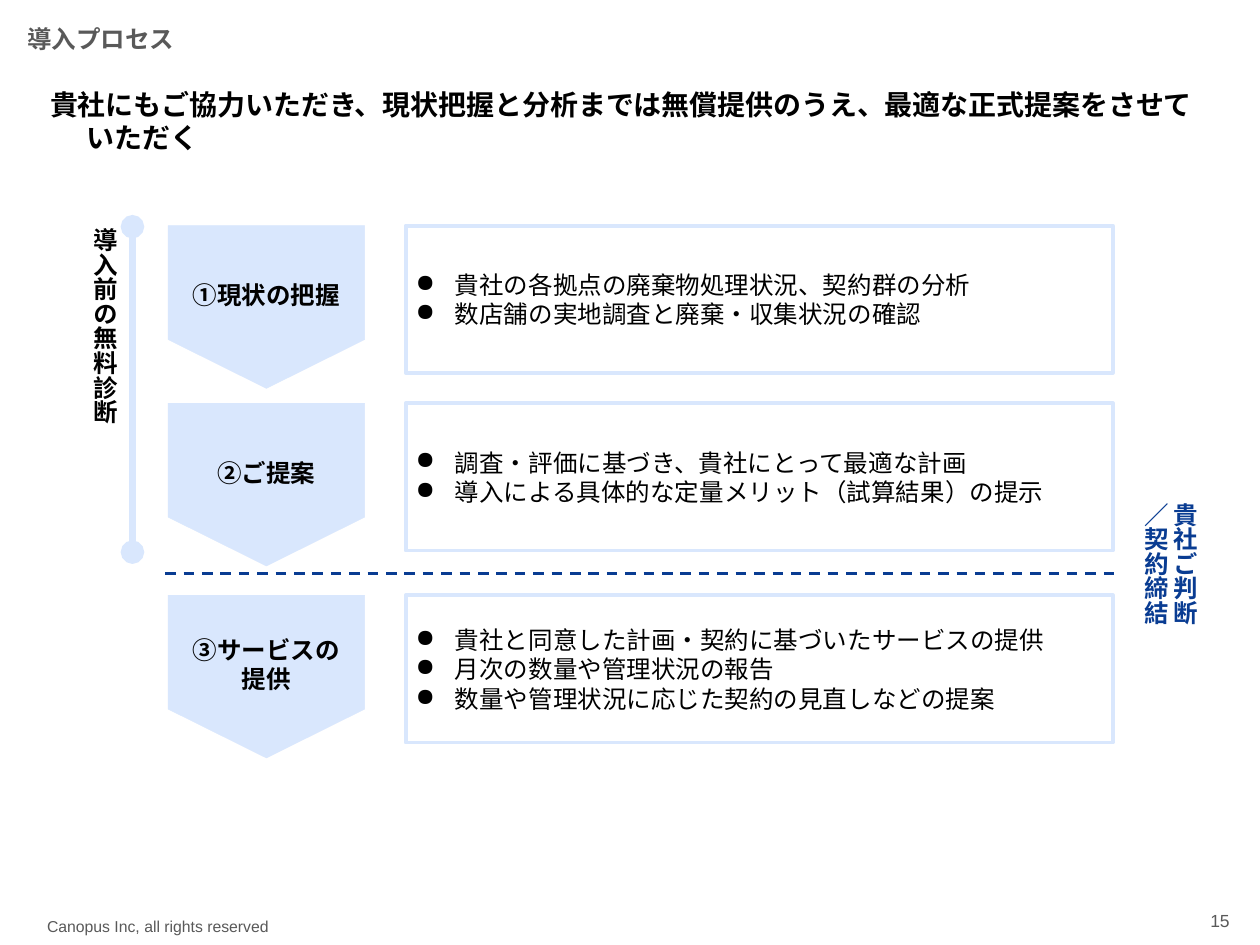
"""Build the introduction process slide."""
from dataclasses import dataclass

from lxml.etree import SubElement
from pptx import Presentation
from pptx.dml.color import RGBColor as RGB
from pptx.enum.dml import MSO_LINE as Dash
from pptx.enum.shapes import MSO_CONNECTOR as Link, MSO_SHAPE as Shape
from pptx.enum.text import MSO_ANCHOR as Anchor, MSO_AUTO_SIZE as Fit, PP_ALIGN as Align
from pptx.oxml.ns import qn
from pptx.util import Cm, Pt


@dataclass(frozen=True)
class Theme:
    ink: str = "000000"
    grey: str = "595959"
    pale: str = "D9E7FD"
    navy: str = "093C92"
    white: str = "FFFFFF"
    sans: str = "Noto Sans CJK JP"
    latin: str = "Arial"
    lead: int = 16
    body: int = 14
    page: int = 10
    foot: int = 9
    pitch: float = 1.2


class Deck:
    def __init__(self, theme):
        self.theme = theme
        self.prs = Presentation()
        self.prs.slide_width, self.prs.slide_height = Cm(25.4), Cm(19.05)
        self.slide = self.prs.slides.add_slide(self.prs.slide_layouts[1])
        self.shapes = self.slide.shapes

    def prose(self, frame, lines, size, color=None, bold=False, align=Align.LEFT,
              anchor=Anchor.MIDDLE, pad=(0.25, 0.13), indent=(0, 0), mark=None,
              font=None, vert=None, fit=Fit.NONE):
        """Fill a text frame, one paragraph per line."""
        frame.word_wrap, frame.auto_size = True, fit
        frame.vertical_anchor = anchor
        frame.margin_left = frame.margin_right = Cm(pad[0])
        frame.margin_top = frame.margin_bottom = Cm(pad[1])
        if vert:
            frame._txBody.bodyPr.set("vert", vert)
        for i, line in enumerate(lines):
            para = frame.add_paragraph() if i else frame.paragraphs[0]
            para.alignment = align
            para.space_before = para.space_after = Pt(0)
            para.line_spacing = 1.0 if font else Pt(size * self.theme.pitch)
            self.bullet(para, mark, indent)
            run = para.add_run()
            run.text = line
            face = run.font
            face.size, face.bold = Pt(size), bold
            face.color.rgb = RGB.from_string(color or self.theme.ink)
            face.name = font or self.theme.sans
            SubElement(face._element, qn("a:ea")).set("typeface", face.name)

    def bullet(self, para, mark, indent):
        """Set the indent and the bullet of a paragraph."""
        props = para._p.get_or_add_pPr()
        props.set("marL", str(Cm(indent[0])))
        props.set("indent", str(Cm(indent[1])))
        if mark:
            tint = SubElement(props, qn("a:buClr"))
            SubElement(tint, qn("a:srgbClr")).set("val", self.theme.ink)
            SubElement(props, qn("a:buChar")).set("char", mark)
        else:
            SubElement(props, qn("a:buNone"))

    def holder(self, index, box, line, size, **style):
        """Move and fill a template placeholder."""
        item = self.slide.placeholders[index]
        item.left, item.top, item.width, item.height = map(Cm, box)
        self.prose(item.text_frame, [line], size, bold=True, **style)

    def label(self, box, line, size, **style):
        """Add a text box."""
        item = self.shapes.add_textbox(*map(Cm, box))
        self.prose(item.text_frame, [line], size, **style)

    def block(self, kind, box, fill, width, lines, **style):
        """Add a filled shape with text."""
        item = self.shapes.add_shape(kind, *map(Cm, box))
        item.shadow.inherit = False
        item.fill.solid()
        item.fill.fore_color.rgb = RGB.from_string(fill)
        item.line.color.rgb = RGB.from_string(self.theme.pale)
        item.line.width = Pt(width)
        self.prose(item.text_frame, lines, self.theme.body, **style)
        return item

    def step(self, left, top, wide, high, lines):
        """Add a pentagon that points down."""
        shift = (wide - high) / 2
        item = self.block(Shape.PENTAGON, (left + shift, top - shift, high, wide),
                          self.theme.pale, 0.25, lines, bold=True,
                          align=Align.CENTER, pad=(0.05, 0.05), vert="vert270")
        item.rotation = 90
        item.adjustments[0] = 0.3

    def panel(self, box, lines):
        """Add a framed list."""
        self.block(Shape.RECTANGLE, box, self.theme.white, 2.25, lines,
                   pad=(0.2, 0.1), indent=(0.79, -0.79), mark="●")

    def rule(self, ends, color, width, dash=None, cap=None):
        """Add a straight line."""
        item = self.shapes.add_connector(Link.STRAIGHT, *map(Cm, ends))
        item.line.color.rgb = RGB.from_string(color)
        item.line.width = Pt(width)
        if dash:
            item.line.dash_style = dash
        if cap:
            for end in ("a:headEnd", "a:tailEnd"):
                SubElement(item.line._get_or_add_ln(), qn(end)).set("type", cap)
        SubElement(item._element.spPr, qn("a:effectLst"))


STEPS = [
    (4.55, ["①現状の把握"],
     ["貴社の各拠点の廃棄物処理状況、契約群の分析",
      "数店舗の実地調査と廃棄・収集状況の確認"]),
    (8.13, ["②ご提案"],
     ["調査・評価に基づき、貴社にとって最適な計画",
      "導入による具体的な定量メリット（試算結果）の提示"]),
    (12, ["③サービスの", "提供"],
     ["貴社と同意した計画・契約に基づいたサービスの提供",
      "月次の数量や管理状況の報告",
      "数量や管理状況に応じた契約の見直しなどの提案"]),
]


def main():
    look = Theme()
    deck = Deck(look)
    deck.label((0.7, 18.36, 9.12, 0.63), "Canopus Inc, all rights reserved", look.foot,
               color=look.grey, font=look.latin, anchor=Anchor.TOP)
    deck.label((23.52, 18.08, 1.52, 0.94), "15", look.page, color=look.grey,
               font=look.latin, align=Align.RIGHT)
    deck.holder(0, (0, 0.38, 15.14, 0.82), "導入プロセス", look.body,
                color=look.grey, indent=(0.3, 0))
    deck.holder(1, (0.76, 1.63, 24.03, 0.94),
                "貴社にもご協力いただき、現状把握と分析までは無償提供のうえ、"
                "最適な正式提案をさせていただく",
                look.lead, anchor=Anchor.TOP, indent=(0.74, -0.74), fit=Fit.SHAPE_TO_FIT_TEXT)

    for top, name, items in STEPS:
        deck.step(3.39, top, 3.96, 3.28, name)
        deck.panel((8.18, top, 14.25, 2.97), items)

    side = dict(bold=True, pad=(0.05, 0.05), vert="eaVert")
    deck.rule((2.67, 4.57, 2.67, 11.13), look.pale, 4.5, cap="oval")
    deck.label((1.75, 4.55, 0.71, 6.55), "導入前の無料診断", look.body, **side)
    deck.rule((3.33, 11.56, 22.56, 11.56), look.navy, 1.5, dash=Dash.DASH)
    deck.label((22.94, 10.08, 1.32, 2.97), "貴社ご判断／契約締結", look.body,
               color=look.navy, **side)
    deck.prs.save("out.pptx")


if __name__ == "__main__":
    main()
